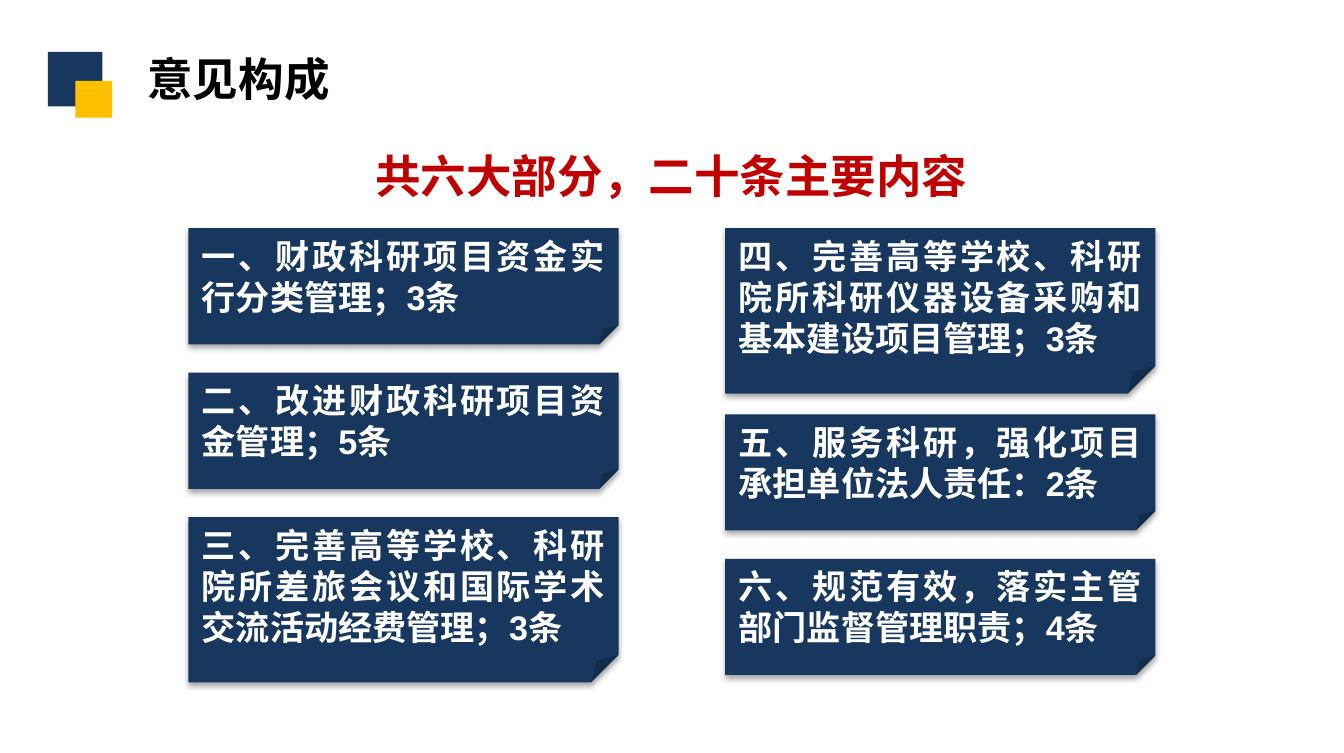
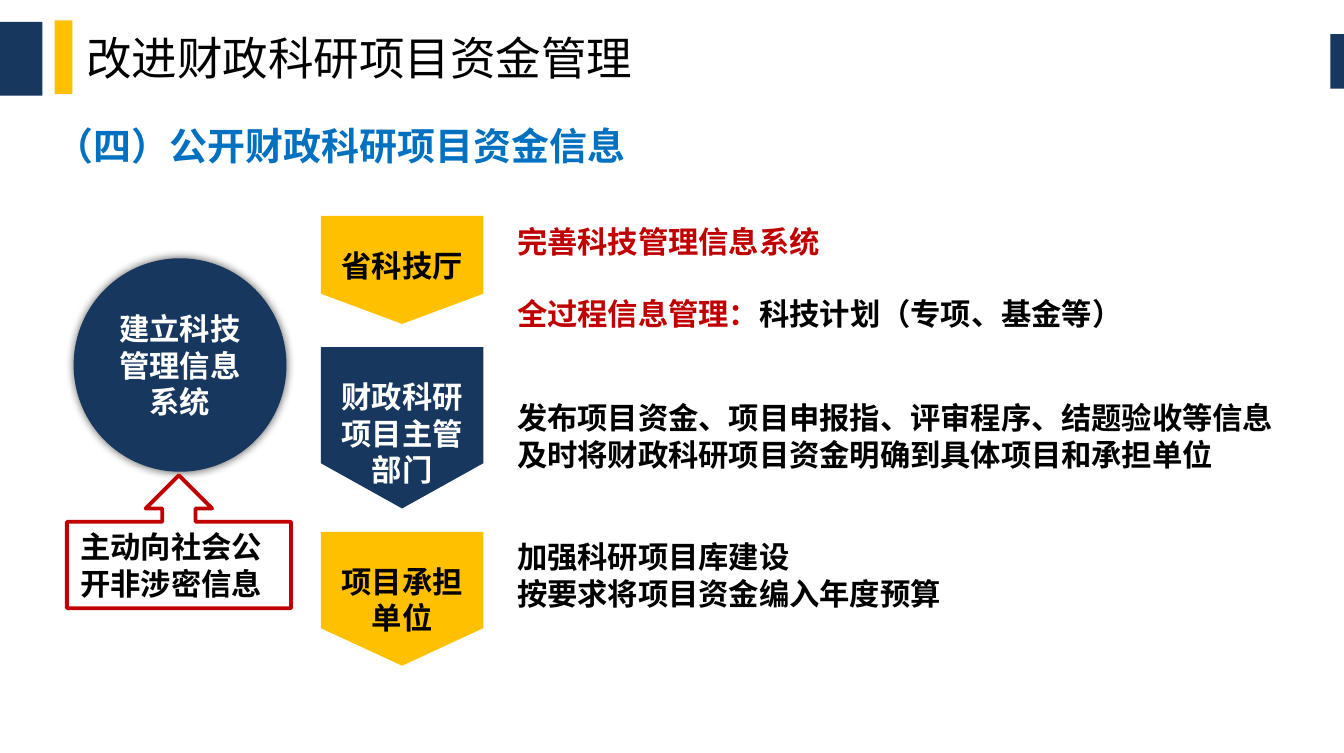
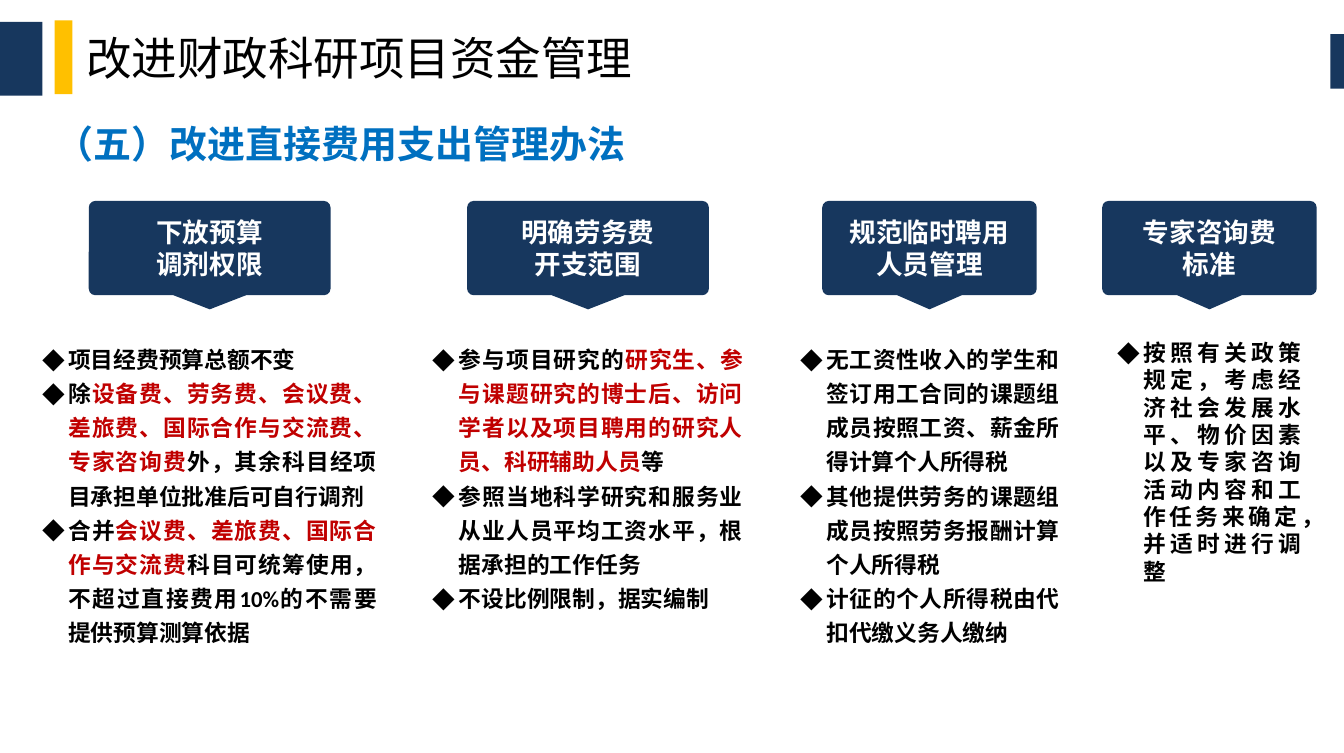
from dataclasses import dataclass

from lxml import etree
from pptx import Presentation
from pptx import util as u
from pptx.dml.color import RGBColor
from pptx.enum import lang, shapes, text
from pptx.oxml import ns

KIND = shapes.MSO_SHAPE
ALIGN = text.PP_ALIGN
ANCHOR = text.MSO_ANCHOR
SLIDE_W = u.Inches(9.84)
SLIDE_H = u.Inches(5.51)


@dataclass(frozen=True)
class Theme:
    navy: str = "17375E"
    gold: str = "FFC000"
    red: str = "C00000"
    blue: str = "0070C0"
    black: str = "000000"
    white: str = "FFFFFF"
    heading_font: str = "Noto Sans CJK SC"
    card_font: str = "Arial"
    body_font: str = "Calibri"
    title_size: int = 24
    subtitle_size: int = 20
    card_size: int = 18
    body_size: int = 16
    tag_size: int = 14
    list_size: int = 12
    line_height: float = 1.2
    insets: tuple = (0.1, 0.05, 0.1, 0.05)
    indent: float = 0.19


THEME = Theme()


@dataclass(frozen=True)
class Box:
    """Lengths are percentages of the slide's width and height."""
    x: float
    y: float
    w: float
    h: float

    def area(self, x, y, w, h):
        return Box(self.x + self.w * x, self.y + self.h * y, self.w * w, self.h * h)

    def emu(self):
        return (int(SLIDE_W * self.x / 100), int(SLIDE_H * self.y / 100),
                int(SLIDE_W * self.w / 100), int(SLIDE_H * self.h / 100))


def rgb(color):
    return RGBColor.from_string(color)


def red(words):
    return words, THEME.red


def set_bullet(paragraph, mark):
    props = paragraph._p.get_or_add_pPr()
    indent = u.Inches(THEME.indent) if mark else 0
    props.set("marL", str(indent))
    props.set("indent", str(-indent))
    if mark:
        etree.SubElement(props, ns.qn("a:buFont")).set("typeface", THEME.heading_font)
        etree.SubElement(props, ns.qn("a:buChar")).set("char", mark)
    else:
        etree.SubElement(props, ns.qn("a:buNone"))


def write(shape, paragraphs, size=THEME.body_size, color=THEME.black,
          font=THEME.body_font, bold=True, align=ALIGN.LEFT, anchor=ANCHOR.TOP,
          insets=THEME.insets, wrap=True, spacing=1, gap=0, bullet=None):
    frame = shape.text_frame
    frame.auto_size = text.MSO_AUTO_SIZE.NONE
    frame.word_wrap = wrap
    frame.vertical_anchor = anchor
    (frame.margin_left, frame.margin_top,
     frame.margin_right, frame.margin_bottom) = map(u.Inches, insets)
    for i, runs in enumerate(paragraphs):
        paragraph = frame.add_paragraph() if i else frame.paragraphs[0]
        paragraph.alignment = align
        paragraph.line_spacing = u.Pt(size * THEME.line_height * spacing)
        paragraph.space_before = u.Pt(gap if i else 0)
        set_bullet(paragraph, bullet)
        for piece in [runs] if isinstance(runs, str) else runs:
            words, tint = (piece, color) if isinstance(piece, str) else piece
            run = paragraph.add_run()
            run.text = words
            run.font.size = u.Pt(size)
            run.font.bold = bold
            run.font.name = font
            run.font.color.rgb = rgb(tint)
            run.font.language_id = lang.MSO_LANGUAGE_ID.SIMPLIFIED_CHINESE
            east_asian = etree.Element(ns.qn("a:ea"), typeface=THEME.heading_font)
            run.font._element.find(ns.qn("a:latin")).addnext(east_asian)


def paint(shape, fill, line=None):
    shape.shadow.inherit = False
    shape.fill.solid()
    shape.fill.fore_color.rgb = rgb(fill)
    if line:
        shape.line.color.rgb = rgb(line)
        shape.line.width = u.Pt(2)
    else:
        shape.line.fill.background()
    return shape


def block(slide, box, fill, kind=KIND.RECTANGLE, line=None):
    return paint(slide.shapes.add_shape(kind, *box.emu()), fill, line)


def cast_shadow(shape, opacity, blur, distance, angle):
    effects = shape._element.spPr.find(ns.qn("a:effectLst"))
    shadow = etree.SubElement(effects, ns.qn("a:outerShdw"),
                              blurRad=str(u.Pt(blur)), dist=str(u.Pt(distance)),
                              dir=str(angle * 60000), algn="ctr", rotWithShape="0")
    color = etree.SubElement(shadow, ns.qn("a:srgbClr"), val=THEME.black)
    etree.SubElement(color, ns.qn("a:alpha"), val=str(opacity * 1000))


def fill_placeholder(placeholder, box, paragraphs, **style):
    placeholder.left, placeholder.top, placeholder.width, placeholder.height = box.emu()
    write(placeholder, paragraphs, **style)


def label(slide, box, words, **style):
    write(slide.shapes.add_textbox(*box.emu()), [words], font=THEME.heading_font, **style)


def bodies(slide):
    return [p for p in slide.placeholders if p.placeholder_format.idx > 0]


def remove_empty(slide):
    for placeholder in list(slide.placeholders):
        if not placeholder.text_frame.text:
            placeholder._element.getparent().remove(placeholder._element)


def emblem(slide, box):
    block(slide, box.area(0, 0, 0.85, 0.83), THEME.navy)
    block(slide, box.area(0.43, 0.44, 0.57, 0.56), THEME.gold)


def section_header(slide, title, subtitle, subtitle_top):
    block(slide, Box(0, 2.9, 3.15, 9.8), THEME.navy)
    block(slide, Box(4.07, 2.72, 1.32, 9.8), THEME.gold)
    block(slide, Box(98.98, 4.54, 1.02, 7.26), THEME.navy)
    fill_placeholder(slide.shapes.title, Box(6.4, 3.99, 48.07, 7.26), [title],
                     size=THEME.title_size, font=THEME.heading_font, bold=False,
                     anchor=ANCHOR.MIDDLE, insets=(0, 0, 0, 0))
    label(slide, Box(3.15, subtitle_top, 45.43, 7.99), subtitle,
          size=THEME.subtitle_size, color=THEME.blue)


def card_column(slide, box, cards):
    top = box.y
    for gap, lines, words in cards:
        height = 2.37 + 6.53 * lines
        card = block(slide, Box(box.x, top + gap, box.w, height),
                     THEME.navy, KIND.FOLDED_CORNER)
        cast_shadow(card, 35, 3.1, 1.8, 90)
        write(card, [words], size=THEME.card_size, color=THEME.white,
              font=THEME.card_font, align=ALIGN.JUSTIFY)
        top += gap + height


def banner(slide, box, words, fill, color):
    left, top, width, height = box.emu()
    shoulder = top + int(height * 0.72)
    outline = slide.shapes.build_freeform(left, top)
    outline.add_line_segments([(left + width, top), (left + width, shoulder),
                               (left + width // 2, top + height), (left, shoulder)])
    pennant = paint(outline.convert_to_shape(), fill)
    write(pennant, [words], color=color, align=ALIGN.CENTER,
          insets=(0.07, 0.23, 0.07, 0.04))


def system_hub(slide, box):
    hub = block(slide, box.area(0.03, 0, 0.95, 0.61), THEME.navy, KIND.OVAL)
    cast_shadow(hub, 64, 5, 0, 0)
    write(hub, ["建立科技管理信息系统"], color=THEME.white, align=ALIGN.CENTER,
          anchor=ANCHOR.MIDDLE)
    notice = block(slide, box.area(0, 0.62, 1, 0.38), THEME.white,
                   KIND.UP_ARROW_CALLOUT, line=THEME.red)
    write(notice, ["主动向社会公开非涉密信息"])


def duty_rows(slide, box, duties):
    top = box.y
    for body, (height, drop, gap, colors, owner, tasks) in zip(bodies(slide), duties):
        row = Box(box.x, top, box.w, height)
        banner(slide, row.area(0, 0, 0.16, 1), owner, *colors)
        fill_placeholder(body, row.area(0.18, drop, 0.82, 1 - drop), tasks,
                         align=ALIGN.JUSTIFY, gap=gap)
        top += height + 3.09


def tag(slide, box, lines):
    plate = block(slide, box.area(0, 0, 1, 0.87), THEME.navy, KIND.ROUNDED_RECTANGLE)
    plate.adjustments[0] = 0.07
    write(plate, lines, size=THEME.tag_size, color=THEME.white, font=THEME.card_font,
          align=ALIGN.CENTER, anchor=ANCHOR.MIDDLE)
    pointer = block(slide, box.area(0.35, 0.87, 0.3, 0.13), THEME.navy,
                    KIND.ISOSCELES_TRIANGLE)
    pointer.rotation = 180


def topic_columns(slide, box, topics):
    for body, (tag_x, tag_w, list_x, list_w, spacing, heading, points) in zip(
            bodies(slide), topics):
        tag(slide, Box(tag_x, box.y, tag_w, box.h * 0.24), heading)
        fill_placeholder(body, Box(list_x, box.y + box.h * 0.29, list_w, box.h * 0.71),
                         points, size=THEME.list_size, align=ALIGN.JUSTIFY,
                         spacing=spacing, bullet="◆")


def composition_slide(slide):
    emblem(slide, Box(3.56, 6.9, 4.78, 8.71))
    fill_placeholder(slide.shapes.title, Box(9.96, 5.81, 15.65, 9.07), ["意见构成"],
                     size=THEME.title_size, font=THEME.heading_font, wrap=False)
    label(slide, Box(26.93, 18.69, 46.24, 9.07), "共六大部分，二十条主要内容",
          size=THEME.title_size, color=THEME.red, wrap=False)
    card_column(slide, Box(14.02, 30.31, 32.01, 60), [
        (0, 2, "一、财政科研项目资金实行分类管理；3条"),
        (3.75, 2, "二、改进财政科研项目资金管理；5条"),
        (3.75, 3, "三、完善高等学校、科研院所差旅会议和国际学术交流活动经费管理；3条")])
    card_column(slide, Box(53.96, 30.31, 32.01, 60), [
        (0, 3, "四、完善高等学校、科研院所科研仪器设备采购和基本建设项目管理；3条"),
        (2.75, 2, "五、服务科研，强化项目承担单位法人责任：2条"),
        (3.75, 2, "六、规范有效，落实主管部门监督管理职责；4条")])


def disclosure_slide(slide):
    section_header(slide, "改进财政科研项目资金管理", "（四）公开财政科研项目资金信息", 15.43)
    system_hub(slide, Box(4.98, 34.3, 16.67, 46.47))
    on_gold = (THEME.gold, THEME.black)
    on_navy = (THEME.navy, THEME.white)
    duty_rows(slide, Box(23.88, 28.68, 75.5, 60), [
        (14.34, 0, 19, on_gold, "省科技厅", [
            [red("完善科技管理信息系统")],
            [red("全过程信息管理："), "科技计划（专项、基金等）"]]),
        (21.42, 0.28, 0, on_navy, "财政科研项目主管部门", [
            "发布项目资金、项目申报指、评审程序、结题验收等信息",
            "及时将财政科研项目资金明确到具体项目和承担单位"]),
        (17.79, 0, 0, on_gold, "项目承担单位", [
            "加强科研项目库建设",
            "按要求将项目资金编入年度预算"])])


def spending_slide(slide):
    section_header(slide, "改进财政科研项目资金管理", "（五）改进直接费用支出管理办法", 15.06)
    topic_columns(slide, Box(0, 26.68, 100, 60), [
        (6.61, 17.99, 2.13, 26.93, 1.25, ["下放预算", "调剂权限"], [
            "项目经费预算总额不变",
            ["除", red("设备费、劳务费、会议费、差旅费、国际合作与交流费、专家咨询费"),
             "外，其余科目经项目承担单位批准后可自行调剂"],
            ["合并", red("会议费、差旅费、国际合作与交流费"),
             "科目可统筹使用，不超过直接费用10%的不需要提供预算测算依据"]]),
        (34.76, 17.99, 31.2, 25.1, 1.25, ["明确劳务费", "开支范围"], [
            ["参与项目研究的",
             red("研究生、参与课题研究的博士后、访问学者以及项目聘用的研究人员、科研辅助人员"),
             "等"],
            "参照当地科学研究和服务业从业人员平均工资水平，根据承担的工作任务",
            "不设比例限制，据实编制"]),
        (61.18, 15.96, 58.54, 21.34, 1.25, ["规范临时聘用", "人员管理"], [
            "无工资性收入的学生和签订用工合同的课题组成员按照工资、薪金所得计算个人所得税",
            "其他提供劳务的课题组成员按照劳务报酬计算个人所得税",
            "计征的个人所得税由代扣代缴义务人缴纳"]),
        (82.01, 15.96, 82.11, 15.75, 1, ["专家咨询费", "标准"], [
            "按照有关政策规定，考虑经济社会发展水平、物价因素以及专家咨询活动内容和"
            "工作任务来确定，并适时进行调整"])])


def main():
    deck = Presentation()
    deck.slide_width, deck.slide_height = SLIDE_W, SLIDE_H
    title_only, four_bodies = deck.slide_layouts[5], deck.slide_layouts[4]
    for layout, build in [(title_only, composition_slide),
                          (four_bodies, disclosure_slide),
                          (four_bodies, spending_slide)]:
        slide = deck.slides.add_slide(layout)
        build(slide)
        remove_empty(slide)
    deck.save("out.pptx")


if __name__ == "__main__":
    main()
